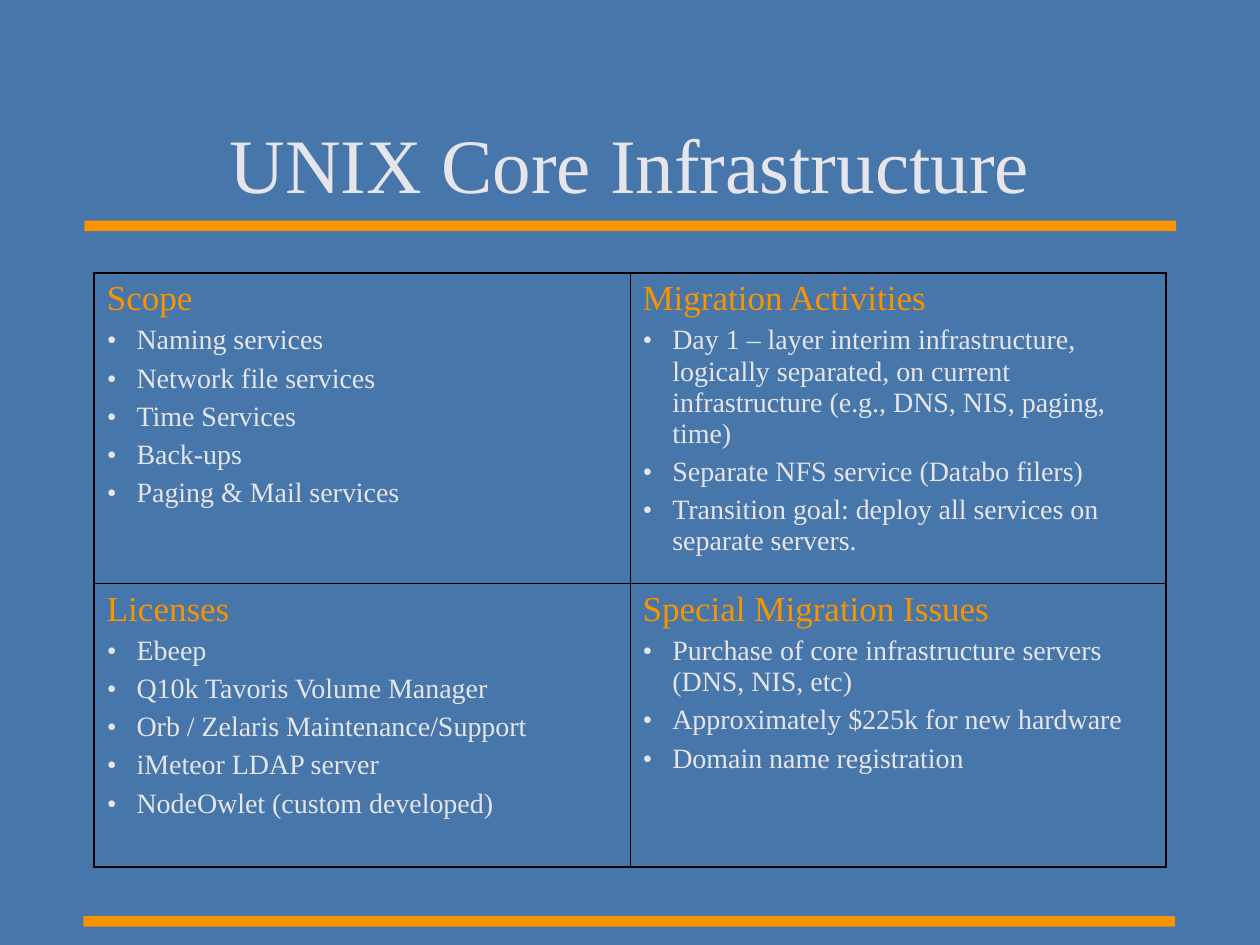
from dataclasses import dataclass

from lxml import etree
from pptx import Presentation
from pptx.dml.color import RGBColor
from pptx.enum import shapes, text
from pptx.oxml.ns import qn
from pptx.util import Cm, Pt


@dataclass(frozen=True)
class Theme:
    font: str = "Times New Roman"
    background: str = "4676AA"
    accent: str = "F89400"
    body: str = "E6E5EB"
    border: str = "000000"
    title_size: float = 44
    heading_size: float = 20
    bullet_size: float = 16
    outer_border: float = 1.08
    inner_border: float = 0.45


@dataclass(frozen=True)
class Topic:
    heading: str
    points: tuple[str, ...]


@dataclass(frozen=True)
class Bar:
    left: float
    top: float
    width: float = 22.01
    height: float = 0.21


THEME = Theme()
ROW_HEIGHT, COLUMN_WIDTH = 5.72, 10.8
BULLET_INDENT = Cm(0.6)

TOPICS = (
    (
        Topic("Scope", (
            "Naming services",
            "Network file services",
            "Time Services",
            "Back-ups",
            "Paging & Mail services",
        )),
        Topic("Migration Activities", (
            "Day 1 – layer interim infrastructure, logically separated, "
            "on current infrastructure (e.g., DNS, NIS, paging, time)",
            "Separate NFS service (Databo filers)",
            "Transition goal: deploy all services on separate servers.",
        )),
    ),
    (
        Topic("Licenses", (
            "Ebeep",
            "Q10k Tavoris Volume Manager",
            "Orb / Zelaris Maintenance/Support",
            "iMeteor LDAP server",
            "NodeOwlet (custom developed)",
        )),
        Topic("Special Migration Issues", (
            "Purchase of core infrastructure servers (DNS, NIS, etc)",
            "Approximately $225k for new hardware",
            "Domain name registration",
        )),
    ),
)
BARS = (Bar(1.7, 4.45), Bar(1.68, 18.47))


def style_runs(paragraph, size: float, color: str) -> None:
    for run in paragraph.runs:
        run.font.name = THEME.font
        run.font.size = Pt(size)
        run.font.color.rgb = RGBColor.from_string(color)


def add_bullet(paragraph) -> None:
    props = paragraph._p.get_or_add_pPr()
    props.set("marL", str(BULLET_INDENT))
    props.set("indent", str(-BULLET_INDENT))
    bullet_color = etree.SubElement(props, qn("a:buClr"))
    etree.SubElement(bullet_color, qn("a:srgbClr"), val=THEME.body)
    etree.SubElement(props, qn("a:buFont"), typeface=THEME.font)
    etree.SubElement(props, qn("a:buChar"), char="•")


def set_borders(cell, row: int, column: int) -> None:
    """Draw the outer edges of the grid heavier than the inner ones."""
    props = cell._tc.get_or_add_tcPr()
    outer_edges = {"lnL": column == 0, "lnR": column == 1,
                   "lnT": row == 0, "lnB": row == 1}
    for position, (edge, is_outer) in enumerate(outer_edges.items()):
        width = THEME.outer_border if is_outer else THEME.inner_border
        line = etree.Element(qn(f"a:{edge}"), w=str(Pt(width)))
        fill = etree.SubElement(line, qn("a:solidFill"))
        etree.SubElement(fill, qn("a:srgbClr"), val=THEME.border)
        props.insert(position, line)


def fill_topic(cell, topic: Topic) -> None:
    cell.fill.background()
    frame = cell.text_frame
    frame.text = "\n".join((topic.heading, *topic.points))
    heading, *points = frame.paragraphs
    heading.space_before = Pt(5)
    style_runs(heading, THEME.heading_size, THEME.accent)
    for point in points:
        point.space_before = Pt(4)
        add_bullet(point)
        style_runs(point, THEME.bullet_size, THEME.body)


def add_title(slide, wording: str) -> None:
    frame = slide.shapes.add_textbox(Cm(1.9), Cm(1.7), Cm(21.6), Cm(3.18)).text_frame
    frame.word_wrap = True
    frame.vertical_anchor = text.MSO_ANCHOR.MIDDLE
    frame.text = wording
    title = frame.paragraphs[0]
    title.alignment = text.PP_ALIGN.CENTER
    style_runs(title, THEME.title_size, THEME.body)


def add_topic_table(slide) -> None:
    table = slide.shapes.add_table(
        2, 2, Cm(1.9), Cm(5.5), Cm(2 * COLUMN_WIDTH), Cm(2 * ROW_HEIGHT)).table
    table.first_row = table.horz_banding = False
    for row, topics in enumerate(TOPICS):
        for column, topic in enumerate(topics):
            cell = table.cell(row, column)
            fill_topic(cell, topic)
            set_borders(cell, row, column)


def add_bar(slide, bar: Bar) -> None:
    rule = slide.shapes.add_shape(
        shapes.MSO_SHAPE.RECTANGLE,
        Cm(bar.left), Cm(bar.top), Cm(bar.width), Cm(bar.height))
    rule.shadow.inherit = False
    rule.fill.solid()
    rule.fill.fore_color.rgb = RGBColor.from_string(THEME.accent)
    rule.line.fill.background()


def main() -> None:
    deck = Presentation()
    deck.slide_width, deck.slide_height = Cm(25.4), Cm(19.05)
    slide = deck.slides.add_slide(deck.slide_layouts[6])

    # Background
    slide.background.fill.solid()
    slide.background.fill.fore_color.rgb = RGBColor.from_string(THEME.background)

    # Title and four topics
    add_title(slide, "UNIX Core Infrastructure")
    add_topic_table(slide)

    # Bars under the title and at the foot
    for bar in BARS:
        add_bar(slide, bar)

    deck.save("out.pptx")


if __name__ == "__main__":
    main()
